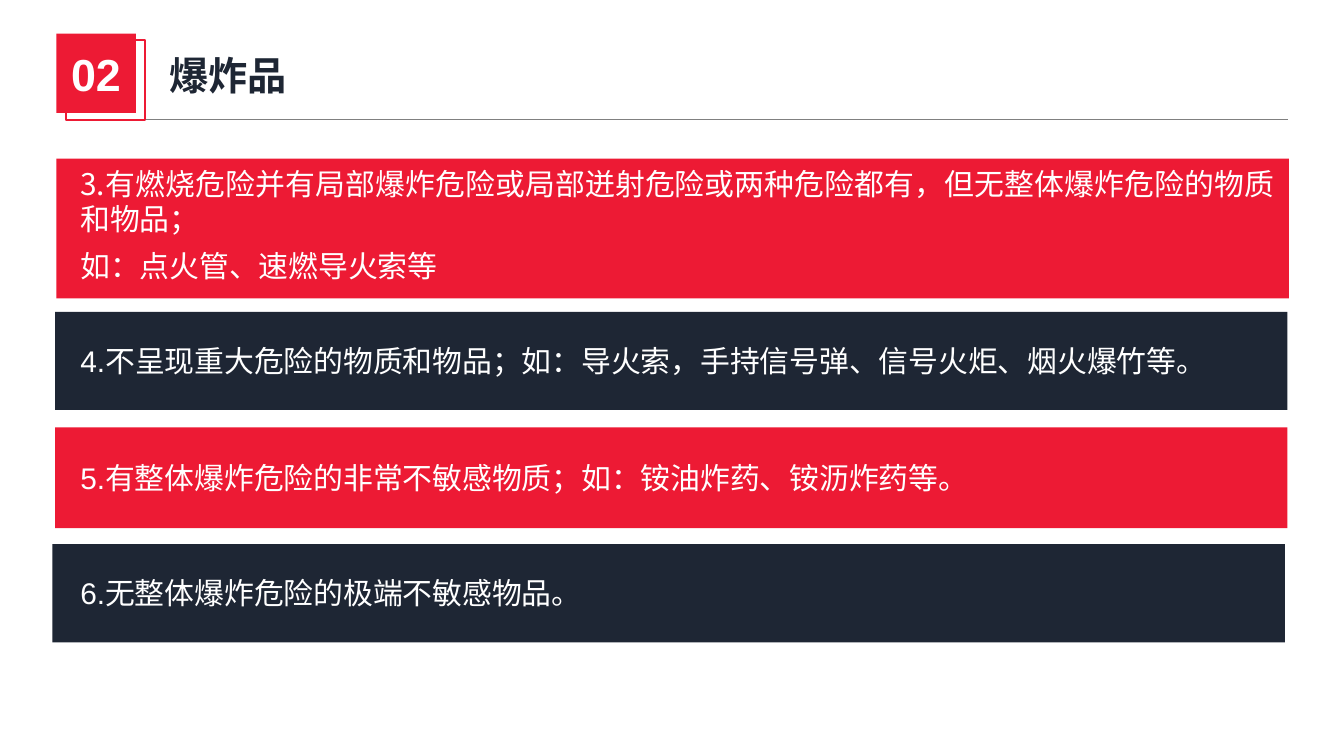
from lxml.etree import SubElement
from pptx import Presentation
from pptx.dml.color import RGBColor
from pptx.enum.shapes import MSO_CONNECTOR, MSO_SHAPE
from pptx.enum.text import MSO_ANCHOR, MSO_AUTO_SIZE, PP_ALIGN
from pptx.oxml.ns import qn
from pptx.util import Inches, Pt

RED, NAVY, WHITE, GRAY = "ED1A34", "1E2634", "FFFFFF", "808080"
SANS, CJK = "Arial", "Noto Sans CJK SC"

BARS = [
    (0.42, 1.18, 1.04, RED),
    (0.41, 2.32, 0.73, NAVY),
    (0.41, 3.18, 0.75, RED),
    (0.39, 4.05, 0.73, NAVY),
]
NOTES = [
    ((0.5, 1.18, 9.09, 1.04), CJK, True, [
        "3.有燃烧危险并有局部爆炸危险或局部迸射危险或两种危险都有，但无整体爆炸危险的物质和物品；",
        "如：点火管、速燃导火索等"]),
    ((0.5, 2.5, 8.82, 0.37), SANS, True,
     ["4.不呈现重大危险的物质和物品；如：导火索，手持信号弹、信号火炬、烟火爆竹等。"]),
    ((0.5, 3.37, 6.83, 0.37), SANS, False,
     ["5.有整体爆炸危险的非常不敏感物质；如：铵油炸药、铵沥炸药等。"]),
    ((0.5, 4.22, 3.94, 0.37), SANS, False,
     ["6.无整体爆炸危险的极端不敏感物品。"]),
]

deck = Presentation()
deck.slide_width = Inches(10)
deck.slide_height = Inches(10) * 9 // 16
slide = deck.slides.add_slide(deck.slide_layouts[5])
shapes = slide.shapes


def color(code):
    return RGBColor.from_string(code)


def apply(item, form):
    for key, value in form.items():
        setattr(item, key, value)


def block(box, fill=None, line=None, kind=MSO_SHAPE.RECTANGLE):
    shape = shapes.add_shape(kind, *map(Inches, box))
    shape.shadow.inherit = False
    if kind == MSO_SHAPE.ROUNDED_RECTANGLE:
        shape.adjustments[0] = 0
    if fill:
        shape.fill.solid()
        shape.fill.fore_color.rgb = color(fill)
    else:
        shape.fill.background()
    if line:
        shape.line.color.rgb = color(line)
        shape.line.width = Pt(1)
    else:
        shape.line.fill.background()


def write(shape, box, lines, size, face, tint, bold=False,
          align=PP_ALIGN.LEFT, wrap=True, after=0):
    frame = shape.text_frame
    apply(frame, dict(
        word_wrap=wrap, auto_size=MSO_AUTO_SIZE.SHAPE_TO_FIT_TEXT,
        vertical_anchor=MSO_ANCHOR.TOP,
        margin_left=Inches(0.1), margin_right=Inches(0.1),
        margin_top=Inches(0.06), margin_bottom=Inches(0.04)))
    frame.text = "\n".join(lines)
    for para in frame.paragraphs:
        apply(para, dict(alignment=align, space_before=Pt(0),
                         space_after=Pt(after),
                         line_spacing=Pt(round(size * 1.17, 1))))
        for run in para.runs:
            apply(run.font, dict(size=Pt(size), name=face, bold=bold))
            run.font.color.rgb = color(tint)
            east = SubElement(run.font._element, qn("a:ea"))
            east.set("typeface", CJK)
    sides = ("left", "top", "width", "height")
    apply(shape, dict(zip(sides, map(Inches, box))))


def label(box, *args, **form):
    write(shapes.add_textbox(*map(Inches, box)), box, *args, **form)


for left, top, height, fill in BARS:
    block((left, top, 9.17, height), fill)

rule = shapes.add_connector(MSO_CONNECTOR.STRAIGHT, Inches(1.07),
                            Inches(0.89), Inches(9.58), Inches(0.89))
rule.line.color.rgb = color(GRAY)
rule.line.width = Pt(0.5)
SubElement(rule._element.spPr, qn("a:effectLst"))

block((0.42, 0.25, 0.59, 0.59), RED, kind=MSO_SHAPE.ROUNDED_RECTANGLE)
block((0.49, 0.3, 0.59, 0.59), line=RED, kind=MSO_SHAPE.ROUNDED_RECTANGLE)
label((0.35, 0.3, 0.73, 0.5), ["02"], 24, SANS, WHITE,
      bold=True, align=PP_ALIGN.CENTER)
write(shapes.title, (1.16, 0.33, 4.4, 0.45), ["爆炸品"], 21, CJK, NAVY,
      bold=True)
for box, face, wrap, lines in NOTES:
    label(box, lines, 16, face, WHITE, align=PP_ALIGN.JUSTIFY,
          wrap=wrap, after=6.5)

deck.save("out.pptx")
